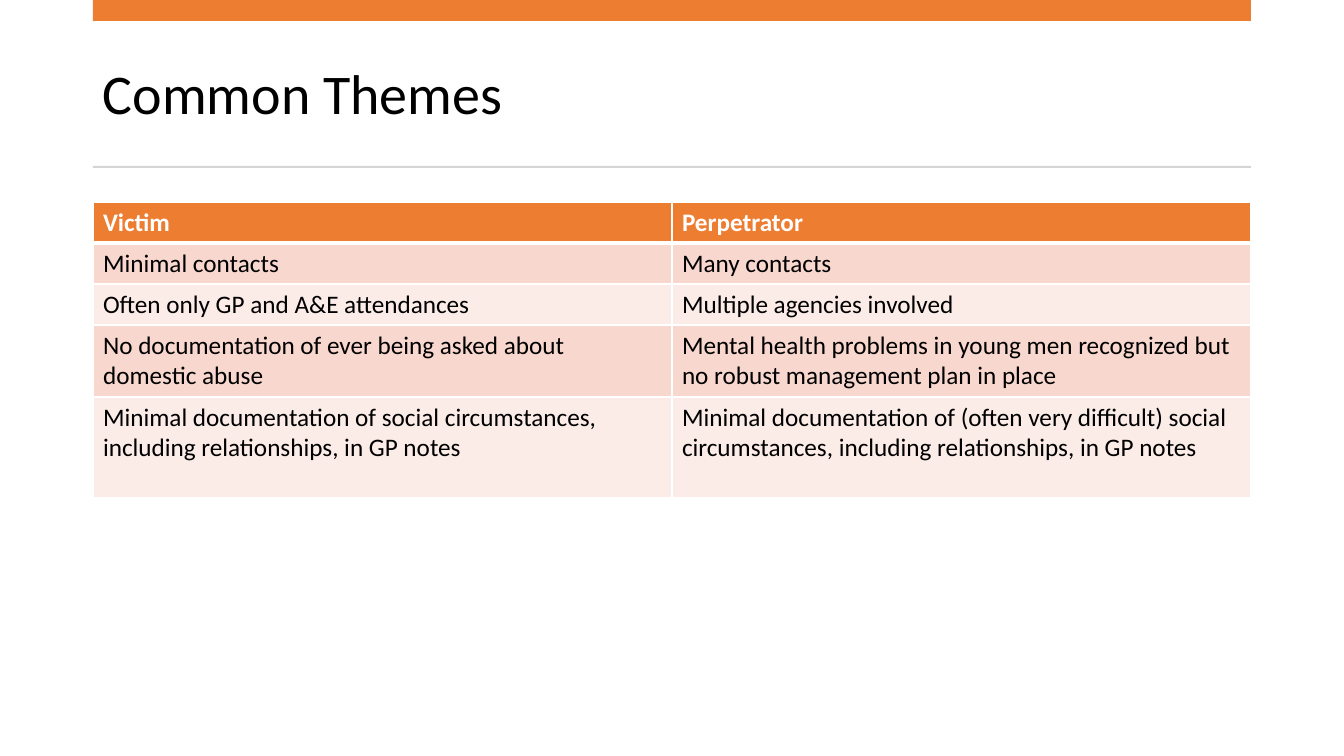
"""Build the Common Themes slide comparing victim and perpetrator."""
from dataclasses import dataclass

from lxml.etree import SubElement
from pptx import Presentation
from pptx.dml.color import RGBColor
from pptx.enum.shapes import MSO_SHAPE as Shape
from pptx.enum.text import MSO_ANCHOR as Anchor
from pptx.oxml.ns import qn
from pptx.util import Emu, Pt


@dataclass(frozen=True)
class Theme:
    font: str = "Calibri"
    title_size: int = 40
    table_size: int = 18
    accent: str = "ED7D31"
    rule: str = "D5D5D5"
    band_dark: str = "F8D7CE"
    band_light: str = "FCECE8"
    text: str = "000000"
    white: str = "FFFFFF"


theme = Theme()
LEFT, WIDTH = 93, 1158
ROW_HEIGHTS = [41, 41, 41, 72, 101]
ROWS = [
    ("Victim", "Perpetrator"),
    ("Minimal contacts", "Many contacts"),
    ("Often only GP and A&E attendances", "Multiple agencies involved"),
    ("No documentation of ever being asked about domestic abuse",
     "Mental health problems in young men recognized but no robust management plan in place"),
    ("Minimal documentation of social circumstances, including relationships, in GP notes",
     "Minimal documentation of (often very difficult) social circumstances, "
     "including relationships, in GP notes"),
]


def px(length):
    return Emu(round(length * 914400 / 100.8))


def add_run(paragraph, text, size, color, bold=False):
    run = paragraph.add_run()
    run.text = text
    run.font.name = theme.font
    run.font.size = Pt(size)
    run.font.bold = bold
    run.font.color.rgb = RGBColor.from_string(color)


presentation = Presentation()
presentation.slide_width, presentation.slide_height = px(1344), px(756)
slide = presentation.slides.add_slide(presentation.slide_layouts[6])

for top, height, color in [(0, 21, theme.accent), (166, 2, theme.rule)]:
    bar = slide.shapes.add_shape(Shape.RECTANGLE, px(LEFT), px(top), px(WIDTH), px(height))
    bar.shadow.inherit = False
    bar.fill.solid()
    bar.fill.fore_color.rgb = RGBColor.from_string(color)
    bar.line.fill.background()

title = slide.shapes.add_textbox(px(LEFT), px(37), px(WIDTH), px(119)).text_frame
title.word_wrap = True
title.vertical_anchor = Anchor.MIDDLE
title.paragraphs[0].line_spacing = 0.9
add_run(title.paragraphs[0], "Common Themes", theme.title_size, theme.text)

table = slide.shapes.add_table(
    len(ROWS), 2, px(LEFT), px(202), px(WIDTH), px(sum(ROW_HEIGHTS))).table
for column in table.columns:
    column.width = px(WIDTH // 2)

for row_index, (texts, height) in enumerate(zip(ROWS, ROW_HEIGHTS)):
    table.rows[row_index].height = px(height)
    header = row_index == 0
    band = theme.band_dark if row_index % 2 else theme.band_light
    borders = {"lnL": 1, "lnR": 1, "lnT": 3 if row_index == 1 else 1, "lnB": 3 if header else 1}
    for column_index, text in enumerate(texts):
        cell = table.cell(row_index, column_index)
        properties = cell._tc.get_or_add_tcPr()
        for side, width in borders.items():
            border = SubElement(properties, qn(f"a:{side}"), w=str(Pt(width)))
            fill = SubElement(border, qn("a:solidFill"))
            SubElement(fill, qn("a:srgbClr"), val=theme.white)
        cell.fill.solid()
        cell.fill.fore_color.rgb = RGBColor.from_string(theme.accent if header else band)
        add_run(cell.text_frame.paragraphs[0], text, theme.table_size,
                theme.white if header else theme.text, header)

presentation.save("out.pptx")
